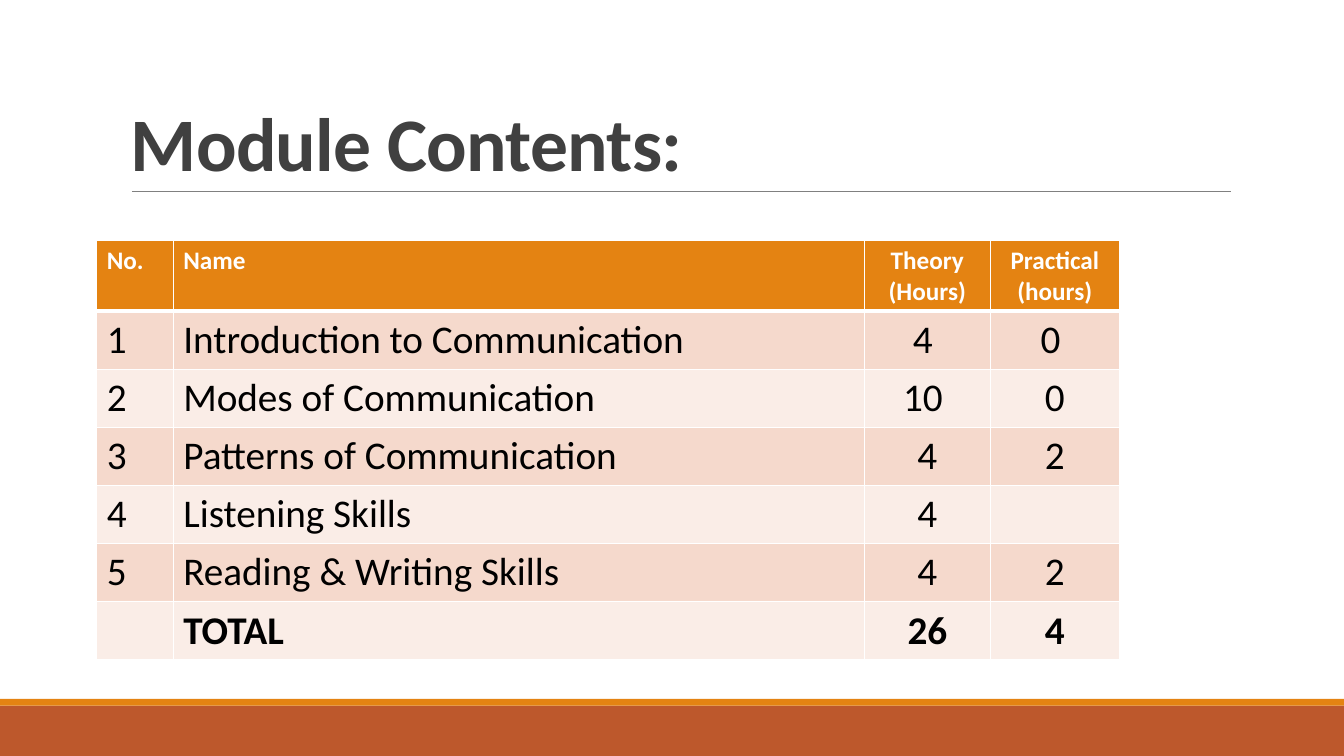
from lxml.etree import SubElement
from pptx import Presentation
from pptx.dml.color import RGBColor
from pptx.enum.shapes import MSO_CONNECTOR, MSO_SHAPE
from pptx.enum.text import MSO_ANCHOR, PP_ALIGN
from pptx.oxml import parse_xml
from pptx.oxml.ns import nsdecls, qn
from pptx.util import Pt

TITLE = "Module Contents:"
HEADER = ("No.", "Name", "Theory\n(Hours)", "Practical\n(hours)")
MODULES = [
    ("1", "Introduction to Communication", "4 ", "0 "),
    ("2", "Modes of Communication", "10 ", "0"),
    ("3", "Patterns of Communication", "4", "2"),
    ("4", "Listening Skills", "4", ""),
    ("5", "Reading & Writing Skills", "4", "2"),
]
TOTAL = ("", "TOTAL", "26", "4")

THEME = {
    "font": "Calibri",
    "title": "404040", "rule": "808080",
    "accent": "E48312", "footer": "BD582C",
    "bands": ("F5D9CC", "FAEDE7"),
    "white": "FFFFFF", "black": "000000",
    "title_size": 54, "header_size": 18, "body_size": 28,
}
WIDTH, HEIGHT = 960, 540
FOOTER_TOP, STRIPE_HEIGHT = 504, 4.8
COLUMNS = (54.7, 493.6, 90, 92.2)
HEADER_HEIGHT, ROW_HEIGHT = 50, 41.55


def add_run(p, text, size, color, bold):
    r = p.add_run()
    r.text = text
    r.font.name = THEME["font"]
    r.font.size = Pt(size)
    r.font.bold = bold
    r.font.color.rgb = RGBColor.from_string(color)
    return r


def add_bar(s, top, height, color):
    sp = s.shapes.add_shape(MSO_SHAPE.RECTANGLE, 0, Pt(top), Pt(WIDTH), Pt(height))
    sp.shadow.inherit = False
    sp.fill.solid()
    sp.fill.fore_color.rgb = RGBColor.from_string(color)
    sp.line.fill.background()


def add_rule(s):
    line = s.shapes.add_connector(
        MSO_CONNECTOR.STRAIGHT, Pt(94.3), Pt(136.8), Pt(879.1), Pt(136.8))
    line.line.color.rgb = RGBColor.from_string(THEME["rule"])
    line.line.width = Pt(0.5)
    SubElement(line._element.spPr, qn("a:effectLst"))


def add_title(s):
    tf = s.shapes.add_textbox(Pt(86.4), Pt(22.3), Pt(792), Pt(114.5)).text_frame
    tf.word_wrap = True
    tf.vertical_anchor = MSO_ANCHOR.BOTTOM
    p = tf.paragraphs[0]
    p.line_spacing = 0.85
    r = add_run(p, TITLE, THEME["title_size"], THEME["title"], True)
    r.font._element.set("spc", "-50")


def set_borders(cell, top, bottom):
    tcPr = cell._tc.get_or_add_tcPr()
    for i, (side, width) in enumerate(
            (("L", 1), ("R", 1), ("T", top), ("B", bottom))):
        tcPr.insert(i, parse_xml(
            f'<a:ln{side} {nsdecls("a")} w="{Pt(width)}"><a:solidFill>'
            f'<a:srgbClr val="{THEME["white"]}"/></a:solidFill></a:ln{side}>'))


def fill_cell(cell, text, row, col, bold):
    head = row == 0
    cell.fill.solid()
    cell.fill.fore_color.rgb = RGBColor.from_string(
        THEME["accent"] if head else THEME["bands"][(row - 1) % 2])
    set_borders(cell, 3 if row == 1 else 1, 3 if head else 1)
    tf = cell.text_frame
    for i, line in enumerate(text.split("\n") if text else []):
        p = tf.add_paragraph() if i else tf.paragraphs[0]
        p.alignment = PP_ALIGN.CENTER if col >= 2 else PP_ALIGN.LEFT
        add_run(p, line, THEME["header_size" if head else "body_size"],
                THEME["white" if head else "black"], bold)


def add_contents(s):
    rows = [HEADER, *MODULES, TOTAL]
    heights = [HEADER_HEIGHT] + [ROW_HEIGHT] * (len(rows) - 1)
    table = s.shapes.add_table(
        len(rows), len(COLUMNS), Pt(69.1), Pt(171.7),
        Pt(sum(COLUMNS)), Pt(sum(heights))).table
    table.horz_banding = False
    for column, width in zip(table.columns, COLUMNS):
        column.width = Pt(width)
    for i, (texts, height) in enumerate(zip(rows, heights)):
        table.rows[i].height = Pt(height)
        for j, text in enumerate(texts):
            fill_cell(table.cell(i, j), text, i, j, texts in (HEADER, TOTAL))


def main():
    prs = Presentation()
    prs.slide_width, prs.slide_height = Pt(WIDTH), Pt(HEIGHT)
    s = prs.slides.add_slide(prs.slide_layouts[6])
    add_bar(s, FOOTER_TOP, HEIGHT - FOOTER_TOP, THEME["footer"])
    add_bar(s, FOOTER_TOP - STRIPE_HEIGHT, STRIPE_HEIGHT, THEME["accent"])
    add_rule(s)
    add_title(s)
    add_contents(s)
    prs.save("out.pptx")


if __name__ == "__main__":
    main()
